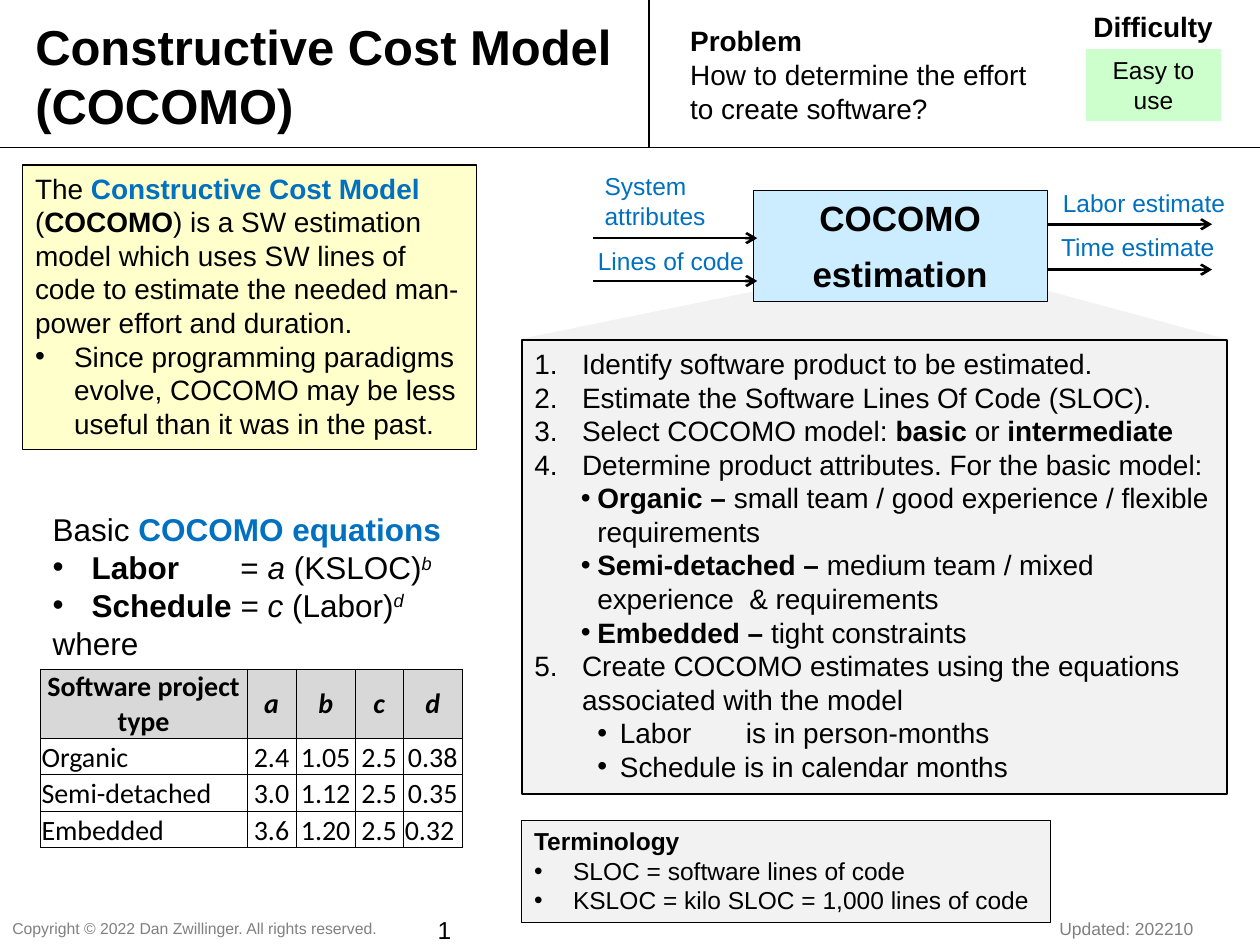
from dataclasses import dataclass

from lxml.etree import SubElement
from pptx import Presentation
from pptx.dml.color import RGBColor
from pptx.enum.shapes import MSO_CONNECTOR as Connector, MSO_SHAPE as Shape
from pptx.enum.text import MSO_ANCHOR as Anchor, MSO_AUTO_SIZE as AutoSize, PP_ALIGN as Align
from pptx.oxml.ns import qn
from pptx.util import Inches, Pt


@dataclass(frozen=True)
class Theme:
    font: str = "Arial"
    table_font: str = "Calibri"
    ink: str = "000000"
    accent: str = "0070C0"
    muted: str = "808080"
    panel: str = "F2F2F2"
    note: str = "FFFFCC"
    process: str = "CCECFF"
    easy: str = "CCFFCC"
    header: str = "D8D8D8"
    title: int = 28
    heading: int = 20
    equation: int = 18
    body: int = 16
    label: int = 14
    updated: int = 10
    copyright: int = 9


@dataclass(frozen=True)
class Box:
    left: float
    top: float
    width: float
    height: float

    def inner(self, left, top, width, height):
        return Box(self.left + left, self.top + top, width, height)

    def lengths(self):
        return [Inches(value) for value in (self.left, self.top, self.width, self.height)]


@dataclass(frozen=True)
class Line:
    runs: tuple
    bullet: str = ""
    margin: float = 0
    hanging: float = 0
    level: int = 0
    tab: float = 0


THEME = Theme()


def plain(text, style=""):
    return Line(((text, style),))


def bulleted(*runs, margin=0.31, hanging=0.31, level=0, tab=0, bullet="•"):
    return Line(runs, bullet, margin, hanging, level, tab)


def numbered(*runs):
    return bulleted(*runs, margin=0.38, hanging=0.38, bullet="1.")


def add_run(paragraph, text, style, size, color, font):
    run = paragraph.add_run()
    run.text = text
    run.font.name, run.font.size = font, Pt(size)
    run.font.bold, run.font.italic = "b" in style, "i" in style
    run.font.color.rgb = RGBColor.from_string(THEME.accent if "a" in style else color)
    if "^" in style:
        run._r.get_or_add_rPr().set("baseline", "30000")


def format_list(paragraph, line):
    properties = paragraph._p.get_or_add_pPr()
    properties.set("marL", str(Inches(line.margin)))
    properties.set("indent", str(-Inches(line.hanging)))
    if line.bullet == "1.":
        SubElement(properties, qn("a:buFont"), typeface="+mj-lt")
        SubElement(properties, qn("a:buAutoNum"), type="arabicPeriod")
    else:
        SubElement(properties, qn("a:buFont"), typeface=THEME.font)
        SubElement(properties, qn("a:buChar"), char=line.bullet)
    if line.tab:
        tabs = SubElement(properties, qn("a:tabLst"))
        SubElement(tabs, qn("a:tab"), pos=str(Inches(line.tab)), algn="l")


def write(frame, lines, size, color=THEME.ink, font=THEME.font, align=Align.LEFT, before=0):
    for index, line in enumerate(lines):
        paragraph = frame.add_paragraph() if index else frame.paragraphs[0]
        paragraph.alignment, paragraph.level = align, line.level
        paragraph.space_before = Pt(before)
        if line.bullet:
            format_list(paragraph, line)
        for text, style in line.runs:
            add_run(paragraph, text, style, size, color, font)


def add_text(slide, box, lines, size, wrap=True, **options):
    frame = slide.shapes.add_textbox(*box.lengths()).text_frame
    frame.word_wrap = wrap
    write(frame, lines, size, **options)


def paint(shape, fill, width):
    shape.fill.solid()
    shape.fill.fore_color.rgb = RGBColor.from_string(fill)
    if width:
        shape.line.color.rgb = RGBColor.from_string(THEME.ink)
        shape.line.width = Pt(width)
    else:
        shape.line.fill.background()


def add_panel(slide, box, fill, width=0, lines=(), size=THEME.body, kind=Shape.RECTANGLE,
              anchor=Anchor.TOP, **options):
    shape = slide.shapes.add_shape(kind, *box.lengths())
    shape.shadow.inherit = False
    paint(shape, fill, width)
    shape.text_frame.vertical_anchor = anchor
    write(shape.text_frame, lines, size, **options)
    return shape


def add_line(slide, start, end, width=0.75, arrow=False):
    points = [Inches(value) for value in (*start, *end)]
    connector = slide.shapes.add_connector(Connector.STRAIGHT, *points)
    connector.line.color.rgb = RGBColor.from_string(THEME.ink)
    connector.line.width = Pt(width)
    properties = connector._element.spPr
    if arrow:
        SubElement(properties.find(qn("a:ln")), qn("a:tailEnd"), type="arrow")
    SubElement(properties, qn("a:effectLst"))


def place(placeholder, box):
    placeholder.left, placeholder.top, placeholder.width, placeholder.height = box.lengths()
    placeholder.text_frame.auto_size = AutoSize.NONE


def build_header(slide, box):
    title = slide.shapes.title
    place(title, box.inner(0.18, 0.08, 4.99, 1.04))
    write(title.text_frame, [plain("Constructive Cost Model", "b"), plain("(COCOMO)", "b")], THEME.title)
    add_text(slide, box.inner(5.38, 0.14, 2.9, 0.91),
             [plain("Problem", "b"), plain("How to determine the effort to create software?")], THEME.body)
    bottom, divider = box.top + box.height, box.left + 5.15
    add_line(slide, (box.left, bottom), (box.left + box.width, bottom))
    add_line(slide, (divider, bottom), (divider, box.top))
    add_text(slide, box.inner(8.58, 0.03, 1.15, 0.37), [plain("Difficulty", "b")], THEME.body, wrap=False)
    add_panel(slide, box.inner(8.62, 0.39, 1.07, 0.57), THEME.easy, lines=[plain("Easy to use")],
              size=THEME.label, align=Align.CENTER)


def build_definition(slide, box):
    add_panel(slide, box, THEME.note, 0.75, [
        Line((("The ", ""), ("Constructive Cost Model ", "ab"), ("(", ""), ("COCOMO", "b"),
              (") is a SW estimation model which uses SW lines of code to estimate "
               "the needed man-power effort and duration.", ""))),
        bulleted(("Since programming paradigms evolve, COCOMO may be less useful "
                  "than it was in the past.", "")),
    ])


def build_diagram(slide, box):
    funnel = add_panel(slide, box.inner(0, 0.73, 5.6, 0.65), THEME.panel, kind=Shape.ISOSCELES_TRIANGLE)
    funnel.adjustments[0] = 0.57
    add_panel(slide, box.inner(1.85, 0.2, 2.33, 0.88), THEME.process, 0.25,
              [plain("COCOMO", "b"), plain("estimation", "b")], THEME.heading,
              anchor=Anchor.MIDDLE, align=Align.CENTER, before=8)
    flows = [
        ("System attributes", 0.57, 0, 1.05, 0.57, True, 0.58, 0.58),
        ("Lines of code", 0.51, 0.59, 1.37, 0.34, False, 0.58, 0.92),
        ("Labor estimate", 4.2, 0.13, 1.5, 0.34, False, 4.19, 0.47),
        ("Time estimate", 4.19, 0.48, 1.42, 0.34, False, 4.19, 0.83),
    ]
    for text, left, top, width, height, wrap, start, level in flows:
        add_text(slide, box.inner(left, top, width, height), [plain(text, "a")], THEME.label,
                 wrap=wrap, align=Align.LEFT if wrap else Align.CENTER)
        x, y = box.left + start, box.top + level
        add_line(slide, (x, y), (x + 1.3, y), 1.5, arrow=True)


def build_steps(slide, box):
    body = slide.placeholders[1]
    place(body, box)
    paint(body, THEME.panel, 1)
    attributes = [
        ("Organic – ", "small team / good experience / flexible requirements"),
        ("Semi-detached –", " medium team / mixed experience  & requirements"),
        ("Embedded –", " tight constraints"),
    ]
    units = ["Labor\tis in person-months", "Schedule is in calendar months"]
    write(body.text_frame, [
        numbered(("Identify software product to be estimated.", "")),
        numbered(("Estimate the Software Lines Of Code (SLOC).", "")),
        numbered(("Select COCOMO model: ", ""), ("basic", "b"), (" or ", ""), ("intermediate", "b")),
        numbered(("Determine product attributes. For the basic model:", "")),
        *[bulleted((name, "b"), (detail, ""), margin=0.5, hanging=0.13, level=1)
          for name, detail in attributes],
        numbered(("Create COCOMO estimates using the equations associated with the model", "")),
        *[bulleted((unit, ""), margin=0.68, hanging=0.18, level=1, tab=1.68) for unit in units],
    ], THEME.body)


def build_equations(slide, box):
    equations = [("Labor\t", "a ", "(KSLOC)", "b"), ("Schedule ", "c ", "(Labor)", "d")]
    add_text(slide, box, [
        Line((("Basic ", ""), ("COCOMO equations", "ab"))),
        *[bulleted((name, "b"), ("= ", ""), (factor, "i"), (base, ""), (power, "i^"), tab=1.49)
          for name, factor, base, power in equations],
        plain("where"),
    ], THEME.equation)


def format_cell(cell, lines, fill, anchor, align):
    cell.margin_left = cell.margin_right = cell.margin_top = Inches(0.01)
    cell.margin_bottom = 0
    cell.vertical_anchor = anchor
    write(cell.text_frame, lines, THEME.body, font=THEME.table_font, align=align)
    properties = cell._tc.get_or_add_tcPr()
    for side in ("lnL", "lnR", "lnT", "lnB"):
        border = SubElement(properties, qn(f"a:{side}"), w=str(Pt(0.5)))
        SubElement(SubElement(border, qn("a:solidFill")), qn("a:srgbClr"), val=THEME.ink)
    if fill:
        cell.fill.solid()
        cell.fill.fore_color.rgb = RGBColor.from_string(fill)
    else:
        cell.fill.background()


def build_coefficients(slide, box):
    rows = [
        ("Organic", "2.4", "1.05", "2.5", "0.38"),
        ("Semi-detached", "3.0", "1.12", "2.5", "0.35"),
        ("Embedded", "3.6", "1.20", "2.5", "0.32 "),
    ]
    table = slide.shapes.add_table(len(rows) + 1, 5, *box.lengths()).table
    table.first_row = table.horz_banding = False
    for column, width in zip(table.columns, (1.64, 0.39, 0.47, 0.38, 0.47)):
        column.width = Inches(width)
    for index, row in enumerate(table.rows):
        row.height = Inches(0.29 if index else 0.55)
    headings = [[plain("Software project", "b"), plain("type", "b")],
                *[[plain(name, "bi")] for name in "abcd"]]
    for column, lines in enumerate(headings):
        format_cell(table.cell(0, column), lines, THEME.header, Anchor.MIDDLE, Align.CENTER)
    for index, values in enumerate(rows, 1):
        for column, value in enumerate(values):
            align = Align.CENTER if column else Align.LEFT
            format_cell(table.cell(index, column), [plain(value)], None, Anchor.BOTTOM, align)


def build_terminology(slide, box):
    terms = ["SLOC = software lines of code", "KSLOC = kilo SLOC = 1,000 lines of code"]
    add_panel(slide, box, THEME.panel, 0.75,
              [plain("Terminology", "b"), *[bulleted((term, "")) for term in terms]], THEME.label)


def build_footer(slide, box):
    add_text(slide, box.inner(0, 0.03, 3.13, 0.25),
             [plain("Copyright © 2022 Dan Zwillinger. All rights reserved.")],
             THEME.copyright, wrap=False, color=THEME.muted)
    add_text(slide, box.inner(8.31, 0.03, 1.27, 0.27), [plain("Updated: 202210")],
             THEME.updated, wrap=False, color=THEME.muted)
    add_text(slide, box.inner(3.13, 0, 0.55, 0.27), [plain("1")], THEME.label, align=Align.RIGHT)


def main():
    presentation = Presentation()
    presentation.slide_width, presentation.slide_height = Inches(10), Inches(7.5)
    slide = presentation.slides.add_slide(presentation.slide_layouts[1])
    build_header(slide, Box(0, 0, 10, 1.17))
    build_diagram(slide, Box(4.13, 1.31, 5.7, 1.39))
    build_steps(slide, Box(4.14, 2.7, 5.6, 3.6))
    build_definition(slide, Box(0.18, 1.31, 3.6, 2.26))
    build_equations(slide, Box(0.32, 4, 3.47, 1.31))
    build_coefficients(slide, Box(0.32, 5.31, 3.36, 1.4))
    build_terminology(slide, Box(4.14, 6.51, 4.2, 0.81))
    build_footer(slide, Box(0, 7.21, 10, 0.29))
    presentation.save("out.pptx")


if __name__ == "__main__":
    main()
